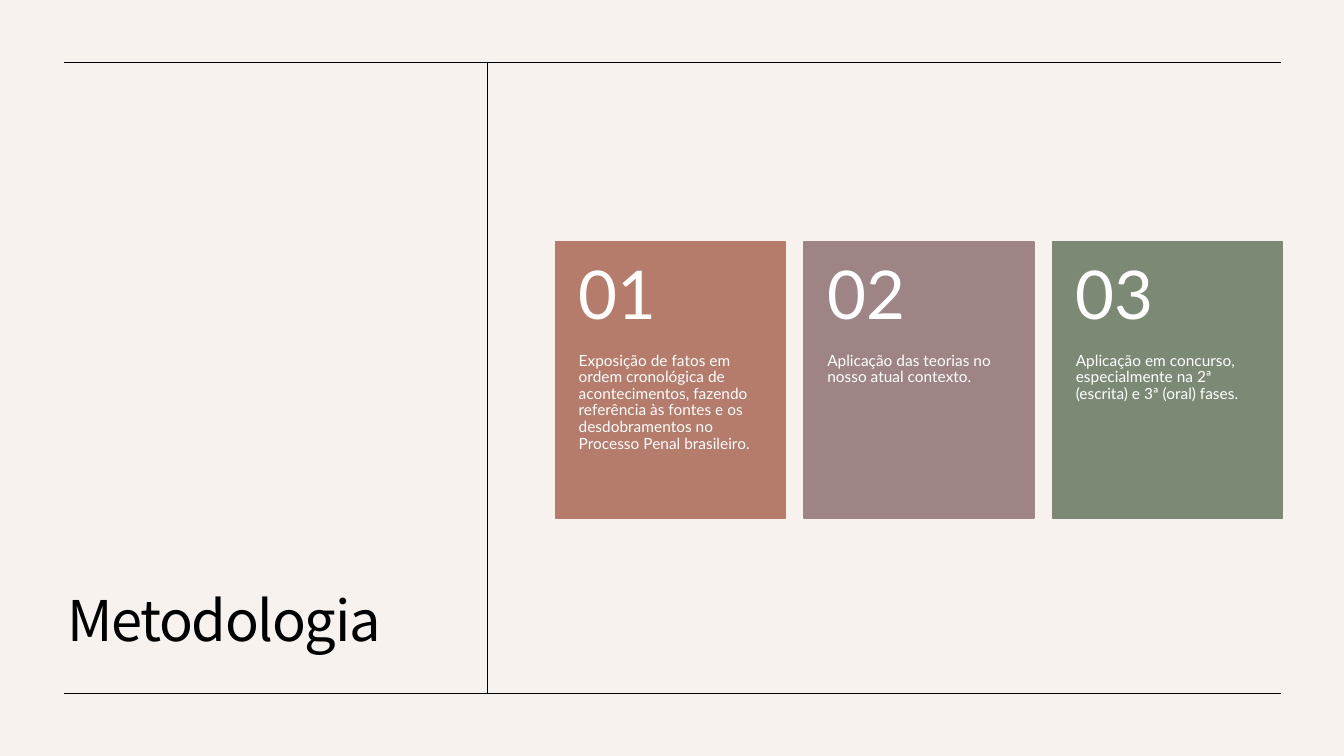
"""Build the Metodologia slide: a framed title beside three numbered cards."""
from pptx import Presentation
from pptx.dml.color import RGBColor
from pptx.enum.shapes import MSO_CONNECTOR as Connector, MSO_SHAPE as Shape
from pptx.enum.text import MSO_ANCHOR as Anchor, MSO_AUTO_SIZE as AutoSize, PP_ALIGN as Align
from pptx.oxml.ns import qn
from pptx.util import Inches, Pt

COLORS = {
    "background": "F7F2EE",
    "ink": "000000",
    "white": "FFFFFF",
    "terracotta": "B57B6B",
    "mauve": "9E8484",
    "sage": "7C8A75",
}


def rgb(name):
    return RGBColor.from_string(COLORS[name])


def write(box, text, size, font="Lato", color="white", anchor=Anchor.TOP,
          insets=(0.1, 0.05, 0.1, 0.05), space_after=0):
    frame = box.text_frame
    frame.word_wrap = True
    frame.auto_size = AutoSize.NONE
    frame.vertical_anchor = anchor
    (frame.margin_left, frame.margin_top,
     frame.margin_right, frame.margin_bottom) = map(Inches, insets)
    paragraph = frame.paragraphs[0]
    paragraph.alignment = Align.LEFT
    paragraph.line_spacing = 0.9
    paragraph.space_before = Pt(0)
    paragraph.space_after = Pt(space_after)
    run = paragraph.add_run()
    run.text = text
    run.font.size = Pt(size)
    run.font.name = font
    run.font.color.rgb = rgb(color)
    return run


prs = Presentation()
prs.slide_width, prs.slide_height = Inches(13.33), Inches(7.5)
slide = prs.slides.add_slide(prs.slide_layouts[5])
slide.background.fill.solid()
slide.background.fill.fore_color.rgb = rgb("background")

title = slide.shapes.title
title.left, title.top, title.width, title.height = map(Inches, (0.57, 0.99, 3.83, 5.54))
heading = write(title, "Metodologia", 40, font="Noto Sans CJK KR", color="ink",
                anchor=Anchor.BOTTOM)
heading.font._element.set("spc", "-100")

LEFT, RIGHT, TOP, BOTTOM, DIVIDER = 0.63, 12.71, 0.62, 6.88, 4.83
for ends in [(LEFT, BOTTOM, RIGHT, BOTTOM),
             (DIVIDER, TOP, DIVIDER, BOTTOM),
             (LEFT, TOP, RIGHT, TOP)]:
    rule = slide.shapes.add_connector(Connector.STRAIGHT, *map(Inches, ends))
    rule.line.color.rgb = rgb("ink")
    rule.line.width = Pt(0.5)
    properties = rule._element.spPr
    properties.append(properties.makeelement(qn("a:effectLst"), {}))

CARD_LEFT, CARD_TOP, CARD_WIDTH, CARD_HEIGHT = 5.51, 2.4, 2.28, 2.74
CARD_STEP, NUMBER_HEIGHT = 2.465, 1.1
cards = [
    ("terracotta", "Exposição de fatos em ordem cronológica de acontecimentos, fazendo "
     "referência às fontes e os desdobramentos no Processo Penal brasileiro."),
    ("mauve", "Aplicação das teorias no nosso atual contexto."),
    ("sage", "Aplicação em concurso, especialmente na 2ª (escrita) e 3ª (oral) fases."),
]
for index, (color, description) in enumerate(cards):
    left, top, width = map(Inches, (CARD_LEFT + index * CARD_STEP, CARD_TOP, CARD_WIDTH))
    card = slide.shapes.add_shape(Shape.RECTANGLE, left, top, width, Inches(CARD_HEIGHT))
    card.shadow.inherit = False
    card.fill.solid()
    card.fill.fore_color.rgb = rgb(color)
    card.line.color.rgb = rgb(color)
    card.line.width = Pt(1)

    body = slide.shapes.add_textbox(left, top + Inches(NUMBER_HEIGHT), width,
                                    Inches(CARD_HEIGHT - NUMBER_HEIGHT))
    write(body, description, 11, insets=(0.23, 0, 0.23, 0.36), space_after=4)
    number = slide.shapes.add_textbox(left, top, width, Inches(NUMBER_HEIGHT))
    write(number, f"{index + 1:02}", 48, anchor=Anchor.MIDDLE,
          insets=(0.23, 0.18, 0.23, 0.18), space_after=17)

prs.save("out.pptx")
